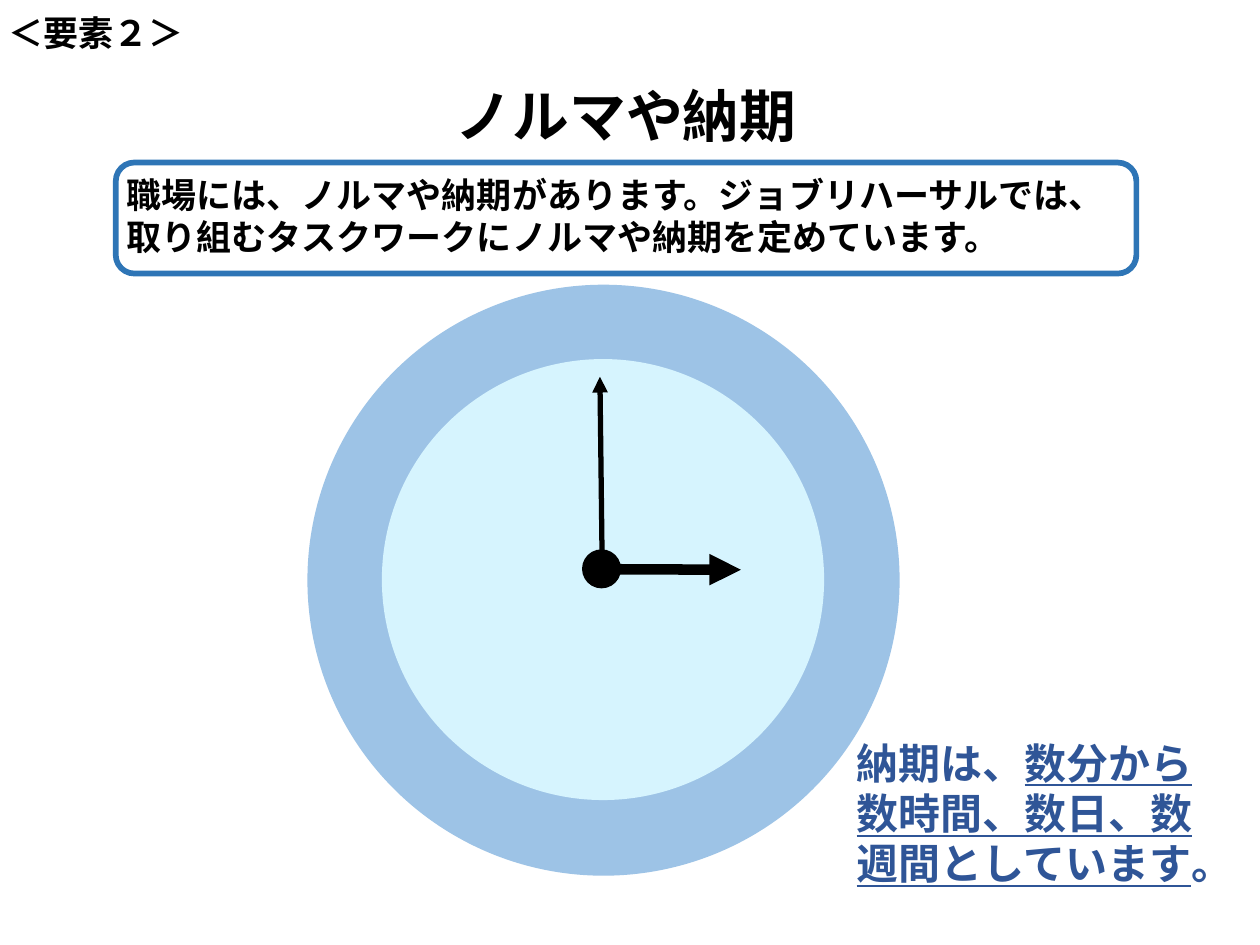
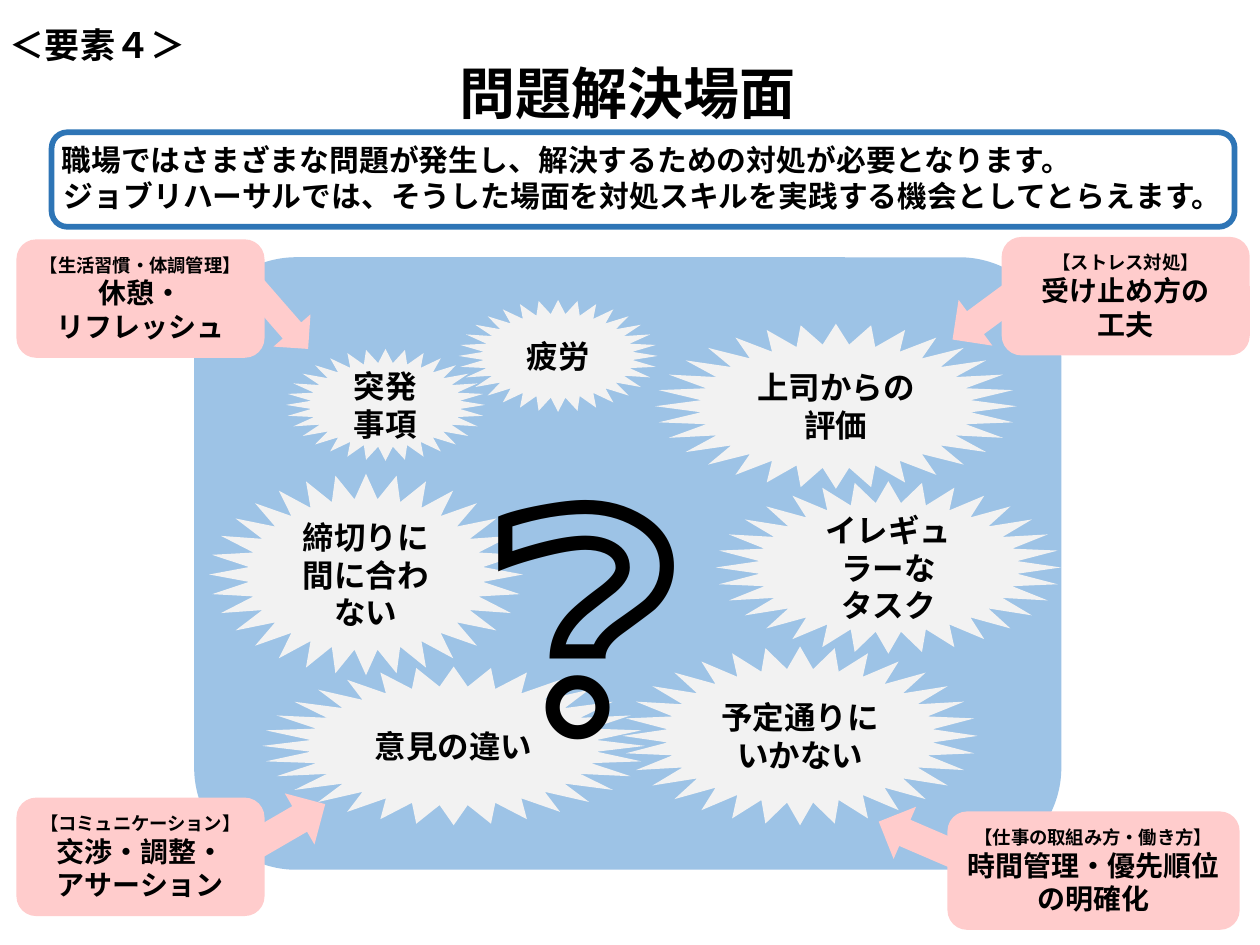
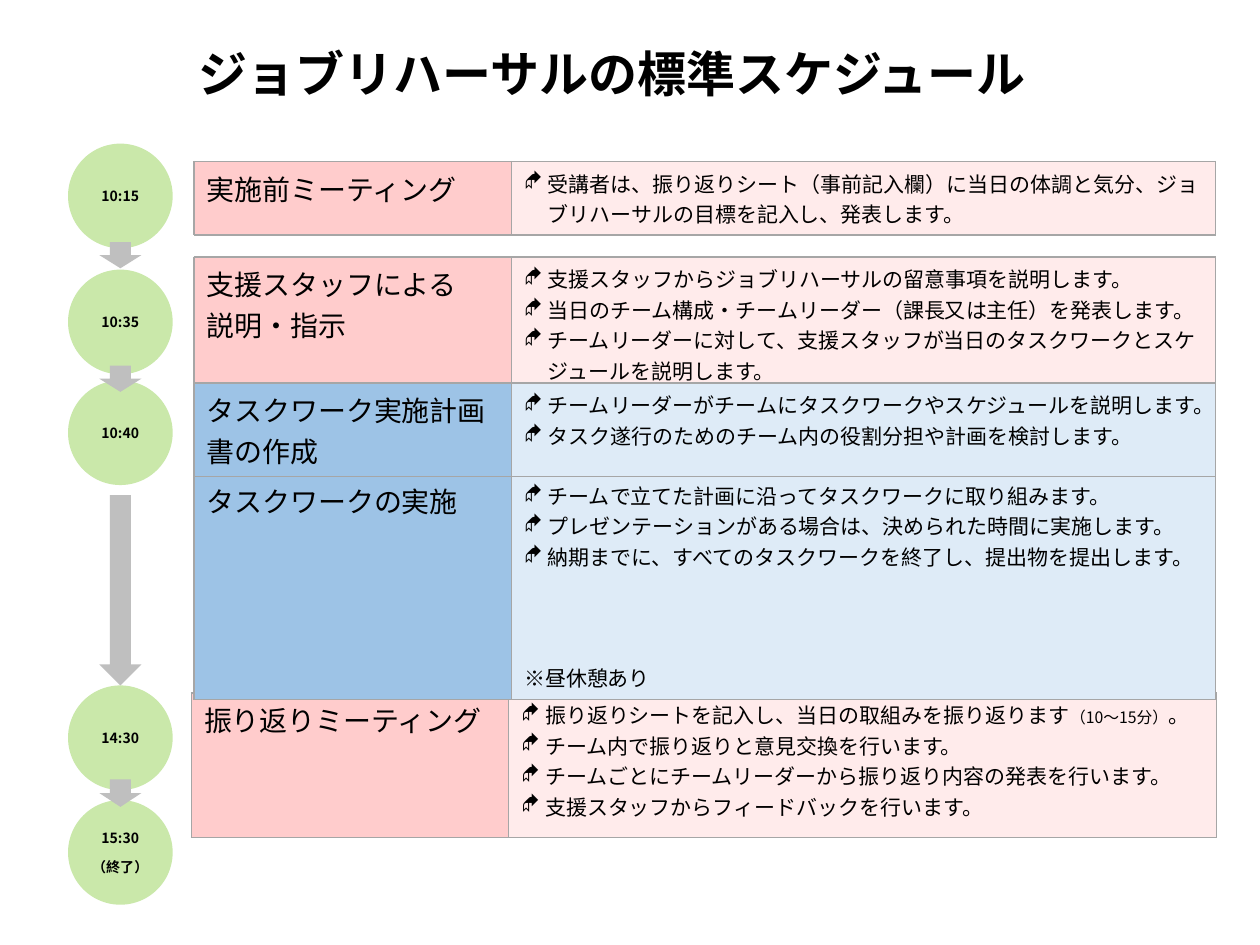
from dataclasses import dataclass
from typing import NamedTuple

from pptx import Presentation
from pptx.dml.color import RGBColor
from pptx.enum.shapes import MSO_CONNECTOR as CONN, MSO_SHAPE as SHP
from pptx.enum.text import MSO_ANCHOR as ANCHOR, MSO_AUTO_SIZE as AUTO, PP_ALIGN as AL
from pptx.oxml.ns import qn
from pptx.util import Pt
from lxml.etree import SubElement

FONT = "Noto Sans CJK JP"
COLORS = {
    "black": "000000", "white": "FFFFFF", "navy": "2F5597", "frame": "2E75B6",
    "blue": "9DC3E6", "pale_blue": "DEEBF7", "dial": "D6F4FE", "grey": "BFBFBF",
    "border": "A6A6A6", "burst": "F2F2F2", "pink": "FFCCCC", "pale_pink": "FFEBEB",
    "green": "CAE8AA",
}


class Run(NamedTuple):
    text: str
    size: float
    bold: bool = True
    underline: bool = False
    color: str = "black"


@dataclass
class Para:
    runs: list[Run]
    align: AL = AL.LEFT
    spacing: float | None = None
    before: float = 0
    bullet: bool = False


class Box(NamedTuple):
    x: float
    y: float
    w: float
    h: float


class Burst(NamedTuple):
    box: Box
    lines: list[str]


class Skill(NamedTuple):
    box: Box
    heading: str
    lines: list[str]


class Arrow(NamedTuple):
    kind: SHP
    box: Box
    turn: float


class Step(NamedTuple):
    x: float
    y: float
    height: float
    text_width: float
    colors: tuple[str, str]
    heading: list[str]
    details: list[Para]


# Text and shape helpers
def rgb(name: str) -> RGBColor:
    return RGBColor.from_string(COLORS[name])


def centred(text: str, size: float, before: float = 0) -> Para:
    return Para([Run(text, size)], AL.CENTER, before=before)


def plain(text: str, size: float, bullet: bool = False, before: float = 0) -> Para:
    return Para([Run(text, size, False)], bullet=bullet, before=before)


def write(tf, paras: list[Para]) -> None:
    for i, para in enumerate(paras):
        p = tf.paragraphs[0] if i == 0 else tf.add_paragraph()
        p.alignment = para.align
        p.space_before = Pt(para.before)
        if para.spacing:
            p.line_spacing = para.spacing
        if para.bullet:
            ppr = p._p.get_or_add_pPr()
            ppr.set("marL", str(Pt(13.5)))
            ppr.set("indent", str(-Pt(13.5)))
            SubElement(ppr, qn("a:buFont"), typeface="Wingdings")
            SubElement(ppr, qn("a:buChar"), char="◆")
        for run in para.runs:
            r = p.add_run()
            r.text = run.text
            font = r.font
            font.name, font.size, font.bold = FONT, Pt(run.size), run.bold
            font.underline = run.underline
            font.color.rgb = rgb(run.color)
            SubElement(r._r.get_or_add_rPr(), qn("a:ea"), typeface=FONT)


def add_shape(s, kind: SHP, box: Box, fill: str, paras: list[Para] | None = None,
              turn: float = 0, inset: float | None = None):
    sp = s.shapes.add_shape(kind, *map(Pt, box))
    sp.shadow.inherit = False
    sp.fill.solid()
    sp.fill.fore_color.rgb = rgb(fill)
    sp.line.fill.background()
    sp.rotation = turn
    tf = sp.text_frame
    if inset is not None:
        tf.margin_left = tf.margin_top = tf.margin_right = tf.margin_bottom = Pt(inset)
    if paras:
        tf.word_wrap = True
        write(tf, paras)
    return sp


def add_text(s, box: Box, paras: list[Para], anchor: ANCHOR = ANCHOR.TOP,
             grow: bool = False) -> None:
    tf = s.shapes.add_textbox(*map(Pt, box)).text_frame
    tf.word_wrap = True
    tf.vertical_anchor = anchor
    tf.auto_size = AUTO.SHAPE_TO_FIT_TEXT if grow else AUTO.NONE
    write(tf, paras)


def add_title(s, box: Box, title: str, size: float, label: str = "",
              spacing: float = 0.9, gap: float = 0) -> None:
    paras = [Para([Run(label, 20)], spacing=spacing)] if label else []
    paras.append(Para([Run(title, size)], AL.CENTER, spacing, gap))
    add_text(s, box, paras, ANCHOR.MIDDLE)


def add_lead(s, box: Box, paras: list[Para]) -> None:
    sp = add_shape(s, SHP.ROUNDED_RECTANGLE, box, "white", paras, inset=3)
    sp.line.color.rgb = rgb("frame")
    sp.line.width = Pt(3.25)
    sp.text_frame.vertical_anchor = ANCHOR.TOP


def add_hand(s, start: tuple[float, float], end: tuple[float, float], width: float) -> None:
    line = s.shapes.add_connector(CONN.STRAIGHT, *map(Pt, start + end))
    line.line.color.rgb = rgb("black")
    line.line.width = Pt(width)
    SubElement(line.line._get_or_add_ln(), qn("a:tailEnd"), type="triangle")
    SubElement(line._element.spPr, qn("a:effectLst"))


def add_step(s, step: Step) -> None:
    widths = (181.4, step.text_width)
    table = s.shapes.add_table(1, 2, Pt(step.x), Pt(step.y), Pt(sum(widths)),
                               Pt(step.height)).table
    table.first_row = table.horz_banding = False
    texts = ([plain(t, 16) for t in step.heading], step.details)
    for i, (width, fill, paras) in enumerate(zip(widths, step.colors, texts)):
        table.columns[i].width = Pt(width)
        cell = table.cell(0, i)
        write(cell.text_frame, paras)
        tcpr = cell._tc.get_or_add_tcPr()
        for side in ("lnL", "lnR", "lnT", "lnB"):
            ln = SubElement(tcpr, qn(f"a:{side}"), w=str(Pt(0.75)))
            SubElement(SubElement(ln, qn("a:solidFill")), qn("a:srgbClr"),
                       val=COLORS["border"])
        cell.fill.solid()
        cell.fill.fore_color.rgb = rgb(fill)


# Slide 1: quotas and deadlines
def deadline_slide(s) -> None:
    add_title(s, Box(-2.2, 8.5, 720, 80), "ノルマや納期", 32.4, "＜要素２＞", 0.7, 27)
    add_shape(s, SHP.OVAL, Box(175.7, 162.7, 338.4, 337.7), "blue")
    add_shape(s, SHP.OVAL, Box(218.2, 205.2, 252.7, 252), "dial")
    add_lead(s, Box(66.2, 92.9, 583.2, 63.4), [Para([Run(
        "職場には、ノルマや納期があります。ジョブリハーサルでは、"
        "取り組むタスクワークにノルマや納期を定めています。", 20)])])
    add_shape(s, SHP.OVAL, Box(332.6, 313.9, 22.3, 22.3), "black")
    add_hand(s, (352, 325.3), (423.4, 325.6), 6)
    add_hand(s, (344.2, 329.8), (342.8, 215.3), 3)
    add_text(s, Box(482.4, 417.6, 209.5, 94.3), [Para([
        Run("納期は、", 24, color="navy"),
        Run("数分から数時間、数日、数週間としています", 24, underline=True, color="navy"),
        Run("。", 24, color="navy"),
    ])], grow=True)


# Slide 2: problem solving
BURSTS = [
    Burst(Box(355.7, 369.4, 203, 102.2), ["予定通りにいかない"]),
    Burst(Box(374.4, 185, 206.6, 94.3), ["上司からの評価"]),
    Burst(Box(119.5, 270.7, 179.3, 115.2), ["締切りに間に合わない"]),
    Burst(Box(149.8, 380.9, 218.9, 90.7), ["意見の違い"]),
    Burst(Box(163.4, 199.4, 113.8, 64), ["突発事項"]),
    Burst(Box(409, 275, 197.3, 98.6), ["イレギュラーな", "タスク"]),
    Burst(Box(262, 171.4, 113.8, 64), ["疲労"]),
]
SKILLS = [
    Skill(Box(9.4, 136.8, 141.8, 67.7), "【生活習慣・体調管理】", ["休憩・", "リフレッシュ"]),
    Skill(Box(9.4, 455.8, 141.8, 67.7), "【コミュニケーション】",
          ["交渉・調整・", "アサーション"]),
    Skill(Box(572.4, 135.4, 141.8, 67.7), "【ストレス対処】", ["受け止め方の", "工夫"]),
    Skill(Box(541.4, 463.7, 167, 67.7), "【仕事の取組み方・働き方】",
          ["時間管理・優先順位の明確化"]),
]
SKILL_ARROWS = [
    Arrow(SHP.LEFT_ARROW, Box(538.5, 160, 60, 32.5), 323.6),
    Arrow(SHP.RIGHT_ARROW, Box(132.5, 165.6, 52.6, 28), 48.9),
    Arrow(SHP.RIGHT_ARROW, Box(136.8, 455.8, 52.6, 33.8), 329.9),
    Arrow(SHP.LEFT_ARROW, Box(499.7, 465.1, 60, 32.5), 23.3),
]


def problem_slide(s) -> None:
    add_shape(s, SHP.ROUNDED_RECTANGLE, Box(111, 147, 495.5, 350), "blue")
    add_lead(s, Box(29.5, 75.6, 676, 54), [
        Para([Run("職場ではさまざまな問題が発生し、解決するための対処が必要となります。", 17)]),
        centred("ジョブリハーサルでは、そうした場面を対処スキルを実践する機会としてとらえます。", 17),
    ])
    add_title(s, Box(-1.4, 4.4, 720, 80), "問題解決場面", 32, "＜要素４＞")
    for burst in BURSTS:
        add_shape(s, SHP.STAR_32_POINT, burst.box, "burst",
                  [centred(t, 18) for t in burst.lines])
    for arrow in SKILL_ARROWS:
        add_shape(s, arrow.kind, arrow.box, "pink", turn=arrow.turn)
    for skill in SKILLS:
        add_shape(s, SHP.ROUNDED_RECTANGLE, skill.box, "pink",
                  [centred(skill.heading, 10.5)] + [centred(t, 16) for t in skill.lines])
    add_text(s, Box(270, 234.7, 172.8, 208), [Para([Run("❔", 166)])], grow=True)


# Slide 3: schedule
MEETING = ("pink", "pale_pink")
WORK = ("blue", "pale_blue")
TIMES = [(82.1, ["10:15"]), (154.1, ["10:35"]), (217.4, ["10:40"]),
         (391.7, ["14:30"]), (457.2, ["15:30", "（終了）"])]
TIME_X, TIME_SIZE = 38.9, 59.8
TIME_ARROWS = [(145.8, 15), (216.4, 15), (337.3, 108.7), (453.2, 15.8)]  # centre, length


def bullets(*texts: str) -> list[Para]:
    return [plain(t, 12, bullet=True) for t in texts]


STEPS = [
    Step(110.9, 146.9, 61.2, 402.5, MEETING, ["支援スタッフによる", "説明・指示"], bullets(
        "支援スタッフからジョブリハーサルの留意事項を説明します。",
        "当日のチーム構成・チームリーダー（課長又は主任）を発表します。",
        "チームリーダーに対して、支援スタッフが当日のタスクワークとスケジュールを説明します。")),
    Step(109.4, 396, 82.8, 404.6, MEETING, ["振り返りミーティング"], [
        Para([Run("振り返りシートを記入し、当日の取組みを振り返ります", 12, False),
              Run("（10～15分）", 9, False), Run("。", 12, False)], bullet=True),
        *bullets("チーム内で振り返りと意見交換を行います。",
                 "チームごとにチームリーダーから振り返り内容の発表を行います。",
                 "支援スタッフからフィードバックを行います。")]),
    Step(110.9, 270.7, 56.9, 402.5, WORK, ["タスクワークの実施"], [
        *bullets("チームで立てた計画に沿ってタスクワークに取り組みます。",
                 "プレゼンテーションがある場合は、決められた時間に実施します。",
                 "納期までに、すべてのタスクワークを終了し、提出物を提出します。"),
        plain("※昼休憩あり", 12, before=52)]),
    Step(110.9, 218.9, 38.9, 402.5, WORK, ["タスクワーク実施計画書の作成"], bullets(
        "チームリーダーがチームにタスクワークやスケジュールを説明します。",
        "タスク遂行のためのチーム内の役割分担や計画を検討します。")),
    Step(110.9, 92.2, 39.6, 402.5, MEETING, ["実施前ミーティング"], bullets(
        "受講者は、振り返りシート（事前記入欄）に当日の体調と気分、"
        "ジョブリハーサルの目標を記入し、発表します。")),
]


def schedule_slide(s) -> None:
    add_title(s, Box(3.6, 5.8, 692, 75.6), "ジョブリハーサルの標準スケジュール", 28)
    for y, lines in TIMES:
        paras = [centred(t, 8, before=7 * i) for i, t in enumerate(lines)]
        add_shape(s, SHP.FLOWCHART_CONNECTOR, Box(TIME_X, y, TIME_SIZE, TIME_SIZE),
                  "green", paras, inset=0)
    for centre, length in TIME_ARROWS:
        x = TIME_X + (TIME_SIZE - length) / 2
        add_shape(s, SHP.RIGHT_ARROW, Box(x, centre - 12, length, 24), "grey", turn=90)
    for step in STEPS:
        add_step(s, step)


def main() -> None:
    prs = Presentation()
    prs.slide_width, prs.slide_height = Pt(720), Pt(540)
    for build in (deadline_slide, problem_slide, schedule_slide):
        build(prs.slides.add_slide(prs.slide_layouts[6]))
    prs.save("out.pptx")


if __name__ == "__main__":
    main()
